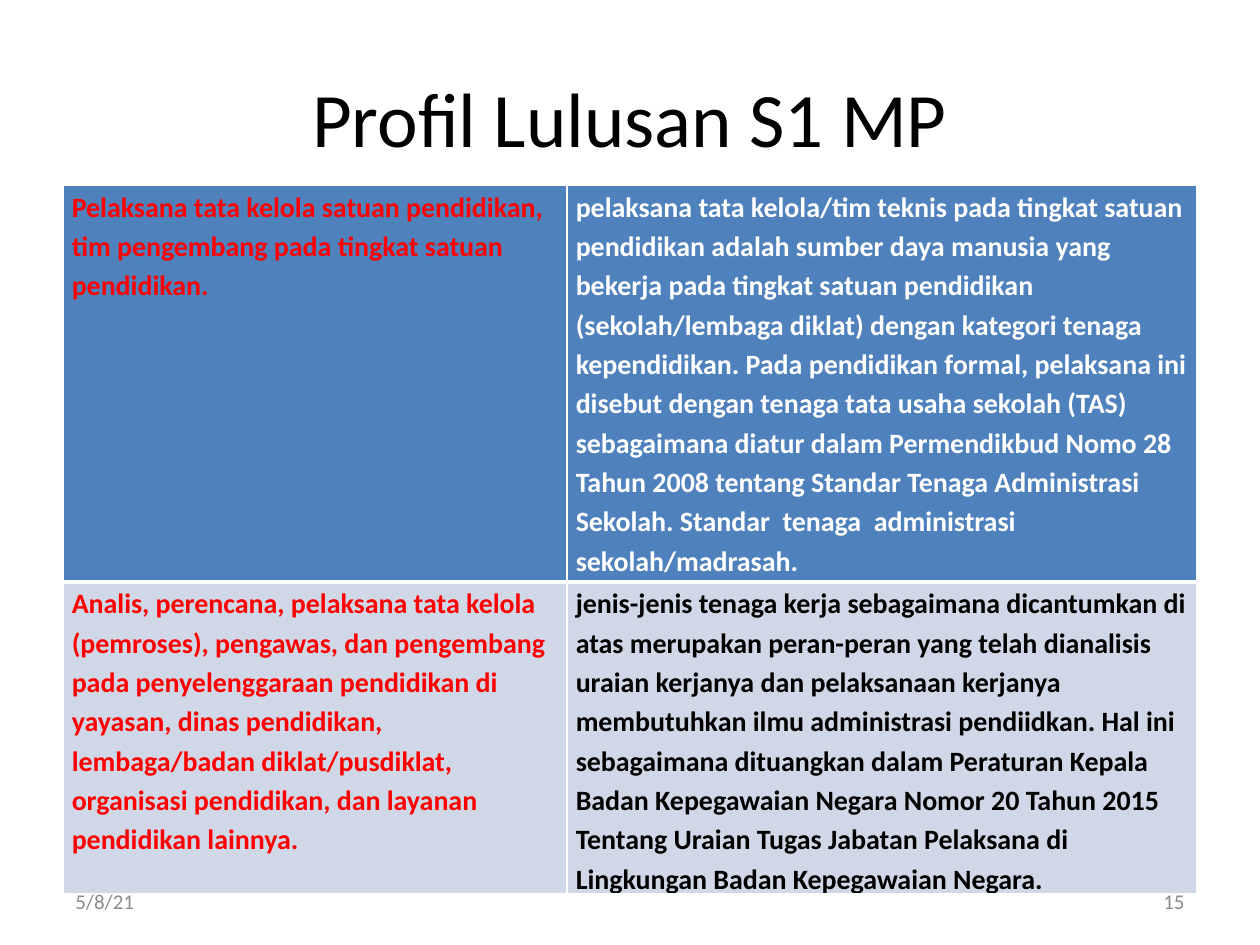
from dataclasses import dataclass

from lxml import etree
from pptx import Presentation
from pptx import util as u
from pptx.dml.color import RGBColor
from pptx.enum import text
from pptx.oxml import ns


@dataclass(frozen=True)
class Theme:
    font: str = "Calibri"
    title_size: int = 44
    body_size: int = 16
    footer_size: int = 12
    black: str = "000000"
    white: str = "FFFFFF"
    red: str = "FF0000"
    grey: str = "8C8C8C"
    blue: str = "4F81BD"
    pale: str = "D0D8E8"


THEME = Theme()
WIDTH, HEIGHT = u.Inches(10), u.Inches(7.5)
MARGIN = 0.05
COLUMN_SHARES = (0.4, 0.5)
ROW_SHARES = (0.42, 0.33)
TABLE_TOP = 0.196
FOOTER_TOP, FOOTER_HEIGHT, FOOTER_WIDTH = 0.927, 0.053, 0.233

PROFILES = [
    (
        "Pelaksana tata kelola satuan pendidikan, tim pengembang pada tingkat satuan pendidikan.",
        "pelaksana tata kelola/tim teknis pada tingkat satuan pendidikan adalah sumber daya manusia "
        "yang bekerja pada tingkat satuan pendidikan (sekolah/lembaga diklat) dengan kategori tenaga "
        "kependidikan. Pada pendidikan formal, pelaksana ini disebut dengan tenaga tata usaha sekolah "
        "(TAS) sebagaimana diatur dalam Permendikbud Nomo 28 Tahun 2008 tentang Standar Tenaga "
        "Administrasi Sekolah. Standar  tenaga  administrasi   sekolah/madrasah.",
    ),
    (
        "Analis, perencana, pelaksana tata kelola (pemroses), pengawas, dan pengembang pada "
        "penyelenggaraan pendidikan di yayasan, dinas pendidikan, lembaga/badan diklat/pusdiklat, "
        "organisasi pendidikan, dan layanan pendidikan lainnya.",
        "jenis-jenis tenaga kerja sebagaimana dicantumkan di atas merupakan peran-peran yang telah "
        "dianalisis uraian kerjanya dan pelaksanaan kerjanya membutuhkan ilmu administrasi pendiidkan. "
        "Hal ini sebagaimana dituangkan dalam Peraturan Kepala Badan Kepegawaian Negara Nomor 20 Tahun "
        "2015 Tentang Uraian Tugas Jabatan Pelaksana di Lingkungan Badan Kepegawaian Negara.",
    ),
]


def apply(target, values):
    for name, value in values.items():
        setattr(target, name, value)


def place(left, top, width, height):
    return [u.Emu(round(share * side)) for share, side in
            zip((left, top, width, height), (WIDTH, HEIGHT, WIDTH, HEIGHT))]


def write(para, words, size, color, bold=False):
    span = para.add_run()
    span.text = words
    apply(span.font, {"name": THEME.font, "size": u.Pt(size), "bold": bold})
    span.font.color.rgb = RGBColor.from_string(color)


def add_label(page, area, words, size, color, align):
    box = page.shapes.add_textbox(*place(*area))
    apply(box.text_frame, {"word_wrap": True, "vertical_anchor": text.MSO_ANCHOR.MIDDLE})
    para = box.text_frame.paragraphs[0]
    para.alignment = align
    write(para, words, size, color)


def set_borders(cell, widths):
    properties = cell._tc.get_or_add_tcPr()
    for index, (side, width) in enumerate(widths.items()):
        line = etree.Element(ns.qn(f"a:ln{side}"), w=str(u.Pt(width)))
        fill = etree.SubElement(line, ns.qn("a:solidFill"))
        etree.SubElement(fill, ns.qn("a:srgbClr"), val=THEME.white)
        properties.insert(index, line)


def fill_cell(cell, words, color, background, widths):
    apply(cell, {"margin_left": u.Inches(0.07), "margin_right": u.Inches(0.07),
                 "margin_top": 0, "margin_bottom": 0})
    cell.fill.solid()
    cell.fill.fore_color.rgb = RGBColor.from_string(background)
    set_borders(cell, widths)
    para = cell.text_frame.paragraphs[0]
    apply(para, {"line_spacing": 1.15, "space_after": u.Pt(10)})
    write(para, words, THEME.body_size, color, bold=True)


def add_profile_table(page):
    area = place(MARGIN, TABLE_TOP, sum(COLUMN_SHARES), sum(ROW_SHARES))
    table = page.shapes.add_table(len(PROFILES), len(COLUMN_SHARES), *area).table
    for column, share in zip(table.columns, COLUMN_SHARES):
        column.width = round(share * WIDTH)
    for row, share in zip(table.rows, ROW_SHARES):
        row.height = round(share * HEIGHT)
    styles = [
        (THEME.blue, THEME.white, {"L": 1, "R": 1, "T": 1, "B": 3}),
        (THEME.pale, THEME.black, {"L": 1, "R": 1, "T": 3, "B": 1}),
    ]
    for row, profile, (background, color, widths) in zip(table.rows, PROFILES, styles):
        for cell, words, ink in zip(row.cells, profile, (THEME.red, color)):
            fill_cell(cell, words, ink, background, widths)


def main():
    deck = Presentation()
    apply(deck, {"slide_width": WIDTH, "slide_height": HEIGHT})
    page = deck.slides.add_slide(deck.slide_layouts[6])
    align = text.PP_ALIGN
    add_label(page, (MARGIN, 0.04, 1 - 2 * MARGIN, 0.167), "Profil Lulusan S1 MP",
              THEME.title_size, THEME.black, align.CENTER)
    add_profile_table(page)
    footers = [
        (MARGIN, "5/8/21", align.LEFT),
        (1 - MARGIN - FOOTER_WIDTH, "15", align.RIGHT),
    ]
    for left, words, side in footers:
        add_label(page, (left, FOOTER_TOP, FOOTER_WIDTH, FOOTER_HEIGHT), words,
                  THEME.footer_size, THEME.grey, side)
    deck.save("out.pptx")


if __name__ == "__main__":
    main()
